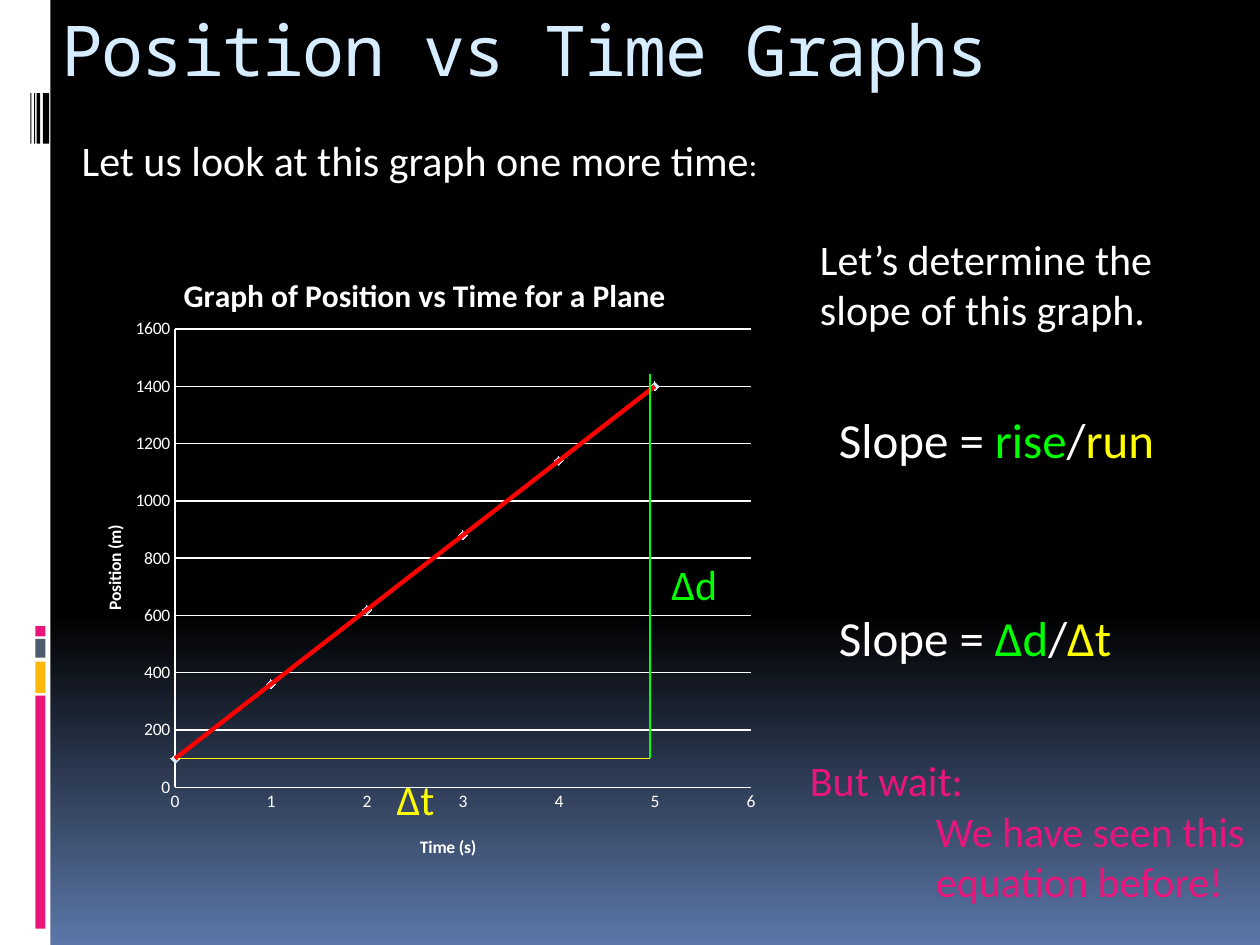
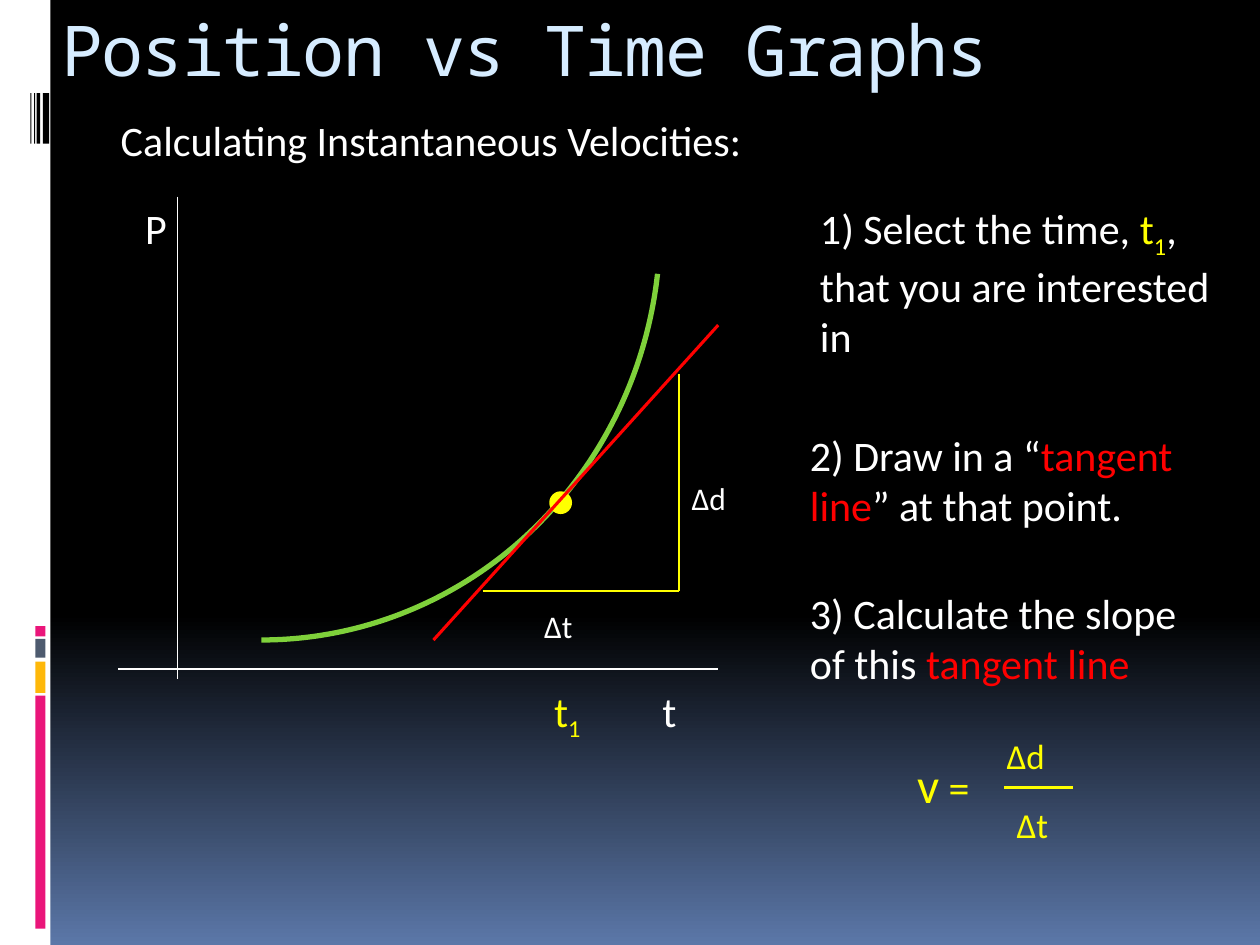
import copy

import lxml.etree
import pptx
import pptx.chart.data
import pptx.dml.color
import pptx.enum.chart
import pptx.enum.shapes
import pptx.oxml.ns
import pptx.util

Inches = pptx.util.Inches
Pt = pptx.util.Pt
qn = pptx.oxml.ns.qn
SHAPE = pptx.enum.shapes.MSO_SHAPE

COLOURS = {
    "black": "000000", "white": "FFFFFF", "sky": "5B77A8", "title": "D6ECFF",
    "pink": "EA157A", "amber": "FEB80A", "slate": "4E5B6F", "leaf": "7FD13B",
    "green": "00FF00", "yellow": "FFFF00", "red": "FF0000",
}
BODY_FONT = "Calibri"
TITLE_FONT = "Noto Sans Mono"
TITLE = "Position vs Time Graphs"

# left, top, width, height, colour
SIDE_BANDS = [
    (0, 0, 0.4, 7.5, "white"),
    (0.28, 5.52, 0.08, 1.85, "pink"),
    (0.28, 5.25, 0.08, 0.25, "amber"),
    (0.28, 5.07, 0.08, 0.15, "slate"),
    (0.28, 4.97, 0.08, 0.08, "pink"),
] + [(left, 0.74, width, 0.4, "black")
     for left, width in ((0.34, 0.05), (0.29, 0.03), (0.27, 0.01), (0.24, 0.01))]


def rgb(name):
    return pptx.dml.color.RGBColor.from_string(COLOURS[name])


def add_child(parent, tag, **attributes):
    return lxml.etree.SubElement(parent, qn(tag), attributes)


def style_font(font, size, colour="white", bold=None, name=BODY_FONT):
    font.name, font.size, font.bold = name, Pt(size), bold
    font.color.rgb = rgb(colour)


def style_line(line, colour, width):
    line.color.rgb = rgb(colour)
    line.width = Pt(width)


def place_in_chart(element, **fractions):
    """Fix a chart part at fractions (x, y, w, h) of the chart frame."""
    layout = element.find(qn("c:layout"))
    if layout is None:
        layout = lxml.etree.Element(qn("c:layout"))
        element.insert(0 if element.find(qn("c:tx")) is None else 1, layout)
    manual = add_child(layout, "c:manualLayout")
    if "w" in fractions:
        add_child(manual, "c:layoutTarget", val="inner")
    for axis in "xy":
        add_child(manual, f"c:{axis}Mode", val="edge")
    for key, value in fractions.items():
        add_child(manual, f"c:{key}", val=str(value))


class Lesson:
    """The deck, its style and the slide being built."""

    def __init__(self):
        self.deck = pptx.Presentation()
        self.deck.slide_width, self.deck.slide_height = Inches(10), Inches(7.5)
        self.page = None

    def new_page(self):
        self.page = self.deck.slides.add_slide(self.deck.slide_layouts[6])
        self.paint_background()
        for *frame, colour in SIDE_BANDS:
            self.shape(SHAPE.RECTANGLE, *frame, fill=colour)
        heading = self.text(0.39, 0, 8.5, 1, [(TITLE, "title")], size=40, font=TITLE_FONT)
        heading.paragraphs[0].runs[0].font._element.set("spc", "-100")

    def paint_background(self):
        fill = self.page.background.fill
        fill.gradient()
        fill.gradient_angle = 270
        stop_list = self.page.element.find(".//" + qn("a:gsLst"))
        stop_list.append(copy.deepcopy(stop_list[-1]))
        for stop, (position, colour) in zip(
                fill.gradient_stops, ((0, "black"), (0.65, "black"), (1, "sky"))):
            stop.position = position
            stop.color.rgb = rgb(colour)

    def shape(self, kind, left, top, width, height, fill=None, line=None, weight=1):
        shape = self.page.shapes.add_shape(
            kind, Inches(left), Inches(top), Inches(width), Inches(height))
        shape.shadow.inherit = False
        if fill:
            shape.fill.solid()
            shape.fill.fore_color.rgb = rgb(fill)
        else:
            shape.fill.background()
        if line:
            style_line(shape.line, line, weight)
        else:
            shape.line.fill.background()
        return shape

    def line(self, start, end, colour, weight=0.94):
        connector = self.page.shapes.add_connector(
            pptx.enum.shapes.MSO_CONNECTOR.STRAIGHT,
            *(Inches(value) for value in (*start, *end)))
        style_line(connector.line, colour, weight)
        add_child(connector._element.spPr, "a:effectLst")

    def text(self, left, top, width, height, *paragraphs, size=24, font=BODY_FONT, wrap=True):
        """Each paragraph is a list of spans: (words, colour, size, baseline)."""
        box = self.page.shapes.add_textbox(
            Inches(left), Inches(top), Inches(width), Inches(height))
        frame = box.text_frame
        frame.word_wrap = wrap
        for number, spans in enumerate(paragraphs):
            para = frame.add_paragraph() if number else frame.paragraphs[0]
            for words, colour, *rest in spans:
                span = para.add_run()
                span.text = words
                style_font(span.font, rest[0] if rest else size, colour, name=font)
                if len(rest) > 1:
                    span.font._element.set("baseline", str(rest[1] * 1000))
        return frame

    def indent(self, para, margin, first=0):
        properties = para._p.get_or_add_pPr()
        properties.set("marL", str(Inches(margin)))
        properties.set("indent", str(Inches(first)))

    def scatter(self, left, top, width, height, title, points):
        data = pptx.chart.data.XyChartData()
        series_data = data.add_series("Series 1")
        for x, y in points:
            series_data.add_data_point(x, y)
        chart = self.page.shapes.add_chart(
            pptx.enum.chart.XL_CHART_TYPE.XY_SCATTER, Inches(left), Inches(top),
            Inches(width), Inches(height), data).chart
        style_font(chart.font, 10)
        chart.has_legend = False
        chart.plots[0].vary_by_categories = False
        self.chart_title(chart.chart_title, title, 18, 0.155, 0.05)
        place_in_chart(chart.element.find(".//" + qn("c:plotArea")),
                       x=0.151, y=0.146, w=0.822, h=0.716)
        self.trend(chart.plots[0].series[0])
        return chart

    def chart_title(self, title, words, size, x, y):
        title.text_frame.text = words
        style_font(title.text_frame.paragraphs[0].runs[0].font, size, bold=True)
        place_in_chart(title._element, x=x, y=y)

    def axis(self, axis, words, x, y, maximum, step, grid):
        axis.minimum_scale, axis.maximum_scale, axis.major_unit = 0, maximum, step
        axis.major_tick_mark = axis.minor_tick_mark = pptx.enum.chart.XL_TICK_MARK.NONE
        axis.has_major_gridlines = grid
        if grid:
            style_line(axis.major_gridlines.format.line, "white", 0.75)
        style_line(axis.format.line, "white", 0.75)
        style_font(axis.tick_labels.font, 10)
        self.chart_title(axis.axis_title, words, 10, x, y)

    def trend(self, series):
        """Show small markers only, with a linear trend line through them."""
        series.smooth = False
        series.format.line.fill.background()
        series.marker.style = pptx.enum.chart.XL_MARKER_STYLE.DIAMOND
        series.marker.size = 5
        series.marker.format.fill.solid()
        series.marker.format.fill.fore_color.rgb = rgb("title")
        series.marker.format.line.fill.background()
        trend = lxml.etree.Element(qn("c:trendline"))
        outline = add_child(add_child(trend, "c:spPr"), "a:ln", w=str(Pt(2.5)))
        add_child(add_child(outline, "a:solidFill"), "a:srgbClr", val=COLOURS["red"])
        add_child(trend, "c:trendlineType", val="linear")
        for tag in ("c:dispRSqr", "c:dispEq"):
            add_child(trend, tag, val="0")
        series._element.find(qn("c:xVal")).addprevious(trend)


def build_slope_page(lesson):
    lesson.new_page()
    chart = lesson.scatter(0.55, 1.87, 5.56, 5.08, "Graph of Position vs Time for a Plane",
                           [(second, 100 + 260 * second) for second in range(6)])
    lesson.axis(chart.category_axis, "Time (s)", 0.496, 0.932, 6, 1, False)
    lesson.axis(chart.value_axis, "Position (m)", 0.044, 0.447, 1600, 200, True)

    lesson.text(0.55, 1.02, 5.7, 0.5,
                [("Let us look at this graph one more time", "white"), (":", "white", 18)])
    lesson.text(6.41, 1.8, 3.36, 0.91, [("Let’s determine the slope of this graph.", "white")])
    for top, rise, run in ((3.2, "rise", "run"), (4.77, "Δd", "Δt")):
        lesson.text(6.56, top, 2.97, 0.57,
                    [("Slope = ", "white"), (rise, "green"), ("/", "white"), (run, "yellow")],
                    size=28)

    corner = (5.16, 6.02)
    lesson.line((5.16, 2.97), corner, "green")
    lesson.line((1.41, 6.02), corner, "yellow")
    lesson.text(5.23, 4.38, 0.59, 0.5, [("Δd", "green")], wrap=False)
    lesson.text(3.05, 6.09, 0.53, 0.5, [("Δt", "yellow")], wrap=False)

    remark = lesson.text(6.33, 5.94, 3.67, 1.31, [("But wait:", "pink")],
                         [("We have seen this equation before!", "pink")])
    lesson.indent(remark.paragraphs[1], 1)


def build_tangent_page(lesson):
    lesson.new_page()
    lesson.line((1.41, 1.56), (1.41, 5.39), "white")
    lesson.line((0.94, 5.31), (5.7, 5.31), "white")
    curve = lesson.shape(SHAPE.ARC, -1.09, -1.48, 6.33, 6.56, line="leaf", weight=3)
    curve.adjustments[0], curve.adjustments[1] = 162, 211.928
    curve._element.spPr.find(qn("a:xfrm")).set("flipV", "1")
    lesson.text(1.09, 1.56, 0.16, 0.5, [("P", "white")])
    lesson.text(5.16, 5.39, 0.63, 0.5, [("t", "white")])

    chosen_time = [("t", "yellow"), ("1", "yellow", 24, -25)]
    lesson.text(0.86, 0.86, 6.09, 0.5, [("Calculating Instantaneous Velocities:", "white")])
    lesson.text(6.41, 1.56, 3.36, 1.31,
                [("1) Select the time, ", "white"), *chosen_time,
                 (", that you are interested in", "white")])
    lesson.shape(SHAPE.OVAL, 4.37, 3.91, 0.16, 0.16, fill="yellow", line="yellow", weight=1.5)
    lesson.text(4.3, 5.39, 0.63, 0.5, chosen_time)
    lesson.text(6.33, 3.36, 3.36, 0.91,
                [("2) Draw in a “", "white"), ("tangent line", "red"),
                 ("” at that point.", "white")])
    lesson.line((3.44, 5.08), (5.7, 2.58), "red", 1.75)
    lesson.text(6.33, 4.61, 3.36, 0.91,
                [("3) Calculate the slope of this ", "white"), ("tangent line", "red")])

    corner = (5.39, 4.69)
    lesson.line((5.39, 2.97), corner, "yellow", 1.25)
    lesson.line((3.83, 4.69), corner, "yellow", 0.75)
    lesson.text(4.22, 4.77, 0.78, 0.4, [("Δt", "white")], size=18)
    lesson.text(5.39, 3.75, 0.78, 0.4, [("Δd", "white")], size=18)

    velocity = lesson.text(7.11, 5.94, 1.56, 0.78, [("v", "yellow", 28), (" =", "yellow")])
    lesson.indent(velocity.paragraphs[0], 0.45, -0.38)
    velocity.paragraphs[0].space_before = Pt(7)
    lesson.text(7.89, 5.78, 0.78, 0.44, [("Δd", "yellow")], size=20)
    lesson.line((7.97, 6.25), (8.52, 6.25), "yellow", 1.75)
    lesson.text(7.97, 6.33, 0.63, 0.44, [("Δt", "yellow")], size=20)


def main():
    lesson = Lesson()
    build_slope_page(lesson)
    build_tangent_page(lesson)
    lesson.deck.save("out.pptx")


if __name__ == "__main__":
    main()
